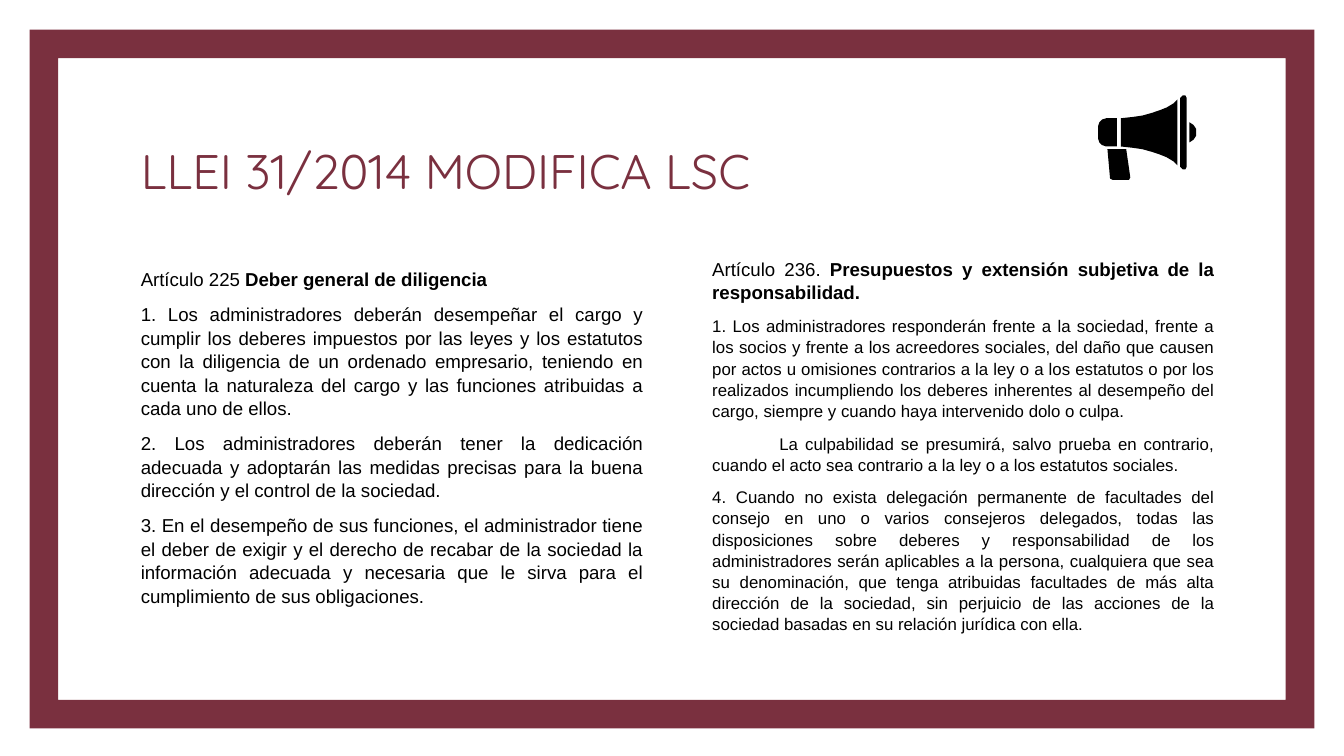
from dataclasses import dataclass

from lxml.etree import SubElement
from pptx import Presentation
from pptx.dml.color import RGBColor
from pptx.enum.shapes import MSO_SHAPE
from pptx.enum.text import MSO_ANCHOR, MSO_AUTO_SIZE, PP_ALIGN
from pptx.oxml.ns import qn
from pptx.util import Cm, Pt

MAROON = "7A303F"
BLACK = "000000"
Points = list[tuple[float, float]]


@dataclass
class Column:
    left: float
    top: float
    article: str
    heading: str
    paragraphs: list[str]
    size: float


COLUMNS = [
    Column(2.41, 4.8, "Artículo 225 ", "Deber general de diligencia", [
        "1. Los administradores deberán desempeñar el cargo y cumplir los deberes impuestos por "
        "las leyes y los estatutos con la diligencia de un ordenado empresario, teniendo en cuenta "
        "la naturaleza del cargo y las funciones atribuidas a cada uno de ellos.",
        "2. Los administradores deberán tener la dedicación adecuada y adoptarán las medidas "
        "precisas para la buena dirección y el control de la sociedad.",
        "3. En el desempeño de sus funciones, el administrador tiene el deber de exigir y el "
        "derecho de recabar de la sociedad la información adecuada y necesaria que le sirva para "
        "el cumplimiento de sus obligaciones.",
    ], 10),
    Column(13.21, 4.6, "Artículo 236. ",
           "Presupuestos y extensión subjetiva de la responsabilidad.", [
        "1. Los administradores responderán frente a la sociedad, frente a los socios y frente a "
        "los acreedores sociales, del daño que causen por actos u omisiones contrarios a la ley o "
        "a los estatutos o por los realizados incumpliendo los deberes inherentes al desempeño "
        "del cargo, siempre y cuando haya intervenido dolo o culpa.",
        "\tLa culpabilidad se presumirá, salvo prueba en contrario, cuando el acto sea contrario "
        "a la ley o a los estatutos sociales.",
        "4. Cuando no exista delegación permanente de facultades del consejo en uno o varios "
        "consejeros delegados, todas las disposiciones sobre deberes y responsabilidad de los "
        "administradores serán aplicables a la persona, cualquiera que sea su denominación, que "
        "tenga atribuidas facultades de más alta dirección de la sociedad, sin perjuicio de las "
        "acciones de la sociedad basadas en su relación jurídica con ella.",
    ], 9),
]

# Megaphone outlines in hundredths of an inch; the upper halves are mirrored.
AXIS = 98.5
HANDLE = [(824, 111), (826, 133), (828, 134), (840, 134), (841, 132), (838, 111)]
UPPER_HALVES = {
    "ear": [(885, 91), (888, 93), (889.5, 96), (889.8, 98)],
    "cap": [(831, 88), (823, 88), (820, 89), (818, 91), (817, 94)],
    "horn": [(834, 88), (843, 87), (850, 86), (857, 84), (863, 82), (868, 80), (873, 77), (876, 74)],
    "rim": [(878, 73), (880, 71), (882, 71), (883, 73)],
}


def color(hex_color: str) -> RGBColor:
    return RGBColor.from_string(hex_color)


def paint(s, hex_color: str) -> None:
    """Give a shape a flat fill without line or shadow."""
    s.shadow.inherit = False
    s.fill.solid()
    s.fill.fore_color.rgb = color(hex_color)
    s.line.fill.background()


def add_text(p, text: str, *, size: float, font: str = "Arial",
             hex_color: str = BLACK, bold: bool = False) -> None:
    r = p.add_run()
    r.text = text
    r.font.size = Pt(size)
    r.font.name = font
    r.font.bold = bold
    r.font.color.rgb = color(hex_color)


def place(sp, left: float, top: float, width: float, height: float, anchor: MSO_ANCHOR):
    """Move a placeholder (in cm) and return its prepared text frame."""
    sp.left, sp.top, sp.width, sp.height = Cm(left), Cm(top), Cm(width), Cm(height)
    tf = sp.text_frame
    tf.margin_left = tf.margin_right = tf.margin_top = tf.margin_bottom = Cm(0.25)
    tf.vertical_anchor = anchor
    tf.word_wrap = True
    tf.auto_size = MSO_AUTO_SIZE.NONE
    return tf


def format_body(p) -> None:
    """Justify a paragraph, drop its bullet and set a tab stop."""
    p.alignment = PP_ALIGN.JUSTIFY
    p.space_before = Pt(6)
    p.line_spacing = 1.05
    pPr = p._p.get_or_add_pPr()
    pPr.set("marL", "0")
    pPr.set("indent", "0")
    SubElement(pPr, qn("a:buNone"))
    tabs = SubElement(pPr, qn("a:tabLst"))
    SubElement(tabs, qn("a:tab"), pos=str(Cm(2.54)), algn="l")


def fill_column(sp, column: Column) -> None:
    tf = place(sp, column.left, column.top, 9.98, 5.92, MSO_ANCHOR.TOP)
    p = tf.paragraphs[0]
    format_body(p)
    add_text(p, column.article, size=10)
    add_text(p, column.heading, size=10, bold=True)
    for text in column.paragraphs:
        p = tf.add_paragraph()
        format_body(p)
        add_text(p, text, size=column.size)


def mirrored(upper: Points) -> Points:
    return upper + [(x, 2 * AXIS - y) for x, y in reversed(upper)]


def add_megaphone(slide) -> None:
    group = slide.shapes.add_group_shape()
    for points in [HANDLE, *map(mirrored, UPPER_HALVES.values())]:
        builder = group.shapes.build_freeform(*points[0], scale=Cm(2.54) / 100)
        builder.add_line_segments(points[1:], close=True)
        paint(builder.convert_to_shape(), BLACK)


def add_frame(slide) -> None:
    """Draw the border behind everything else."""
    frame = slide.shapes.add_shape(MSO_SHAPE.FRAME, Cm(0.56), Cm(0.56), Cm(24.28), Cm(13.21))
    frame.adjustments[0] = 0.041
    paint(frame, MAROON)
    slide.shapes._spTree.insert(2, frame._element)


def main() -> None:
    prs = Presentation()
    prs.slide_width, prs.slide_height = Cm(25.4), Cm(14.29)
    slide = prs.slides.add_slide(prs.slide_layouts.get_by_name("Two Content"))
    add_frame(slide)

    title, *bodies = slide.placeholders
    p = place(title, 2.41, 2.36, 14.15, 1.65, MSO_ANCHOR.BOTTOM).paragraphs[0]
    p.alignment = PP_ALIGN.LEFT
    add_text(p, "LLEI 31/2014 MODIFICA LSC", size=26, font="Quicksand", hex_color=MAROON)

    for sp, column in zip(bodies, COLUMNS):
        fill_column(sp, column)
    add_megaphone(slide)
    prs.save("out.pptx")


if __name__ == "__main__":
    main()
